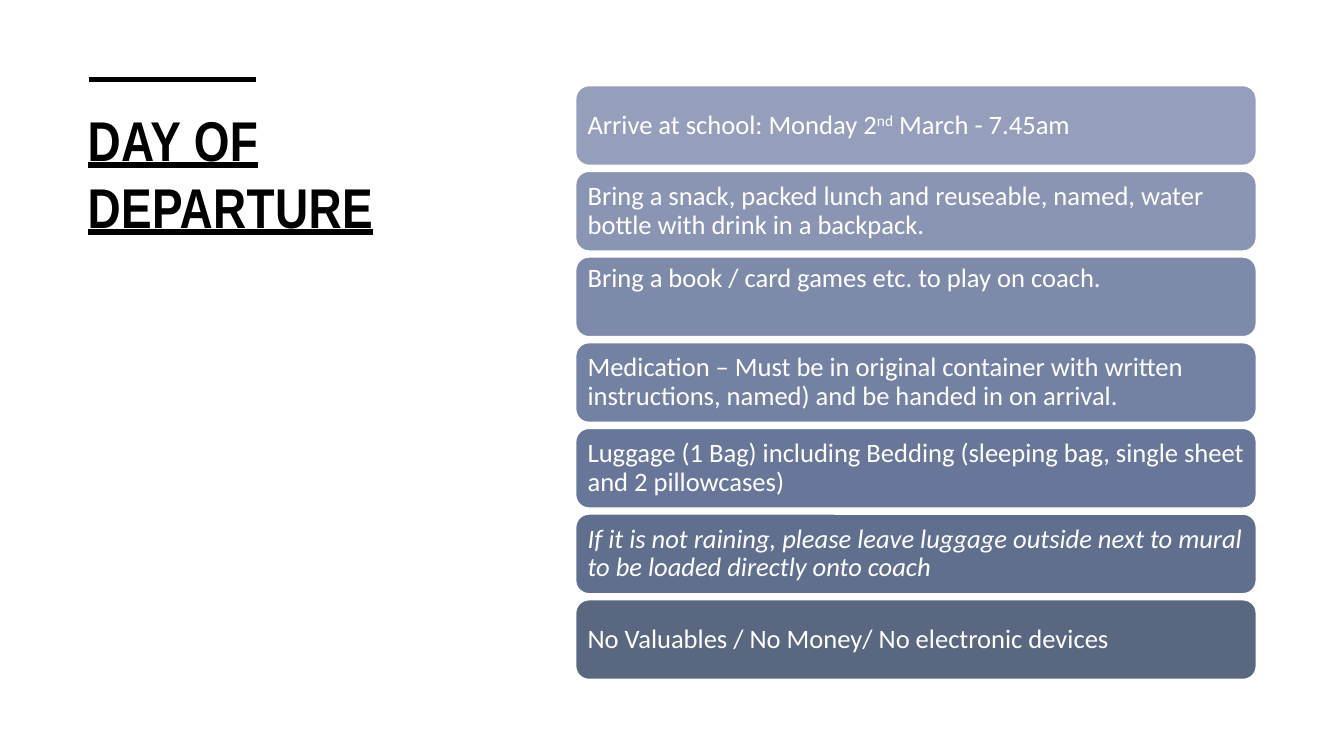
from dataclasses import dataclass

from pptx import Presentation
from pptx.dml.color import RGBColor
from pptx.enum import shapes, text
from pptx.oxml import ns
from pptx.util import Inches, Pt
from lxml import etree


@dataclass(frozen=True)
class Theme:
    ink: str = "000000"
    paper: str = "FFFFFF"
    bars: tuple = ("959EBB", "8A94B3", "7E8AAA", "7381A2",
                   "687799", "606F8D", "596781")
    head: str = "Arial Narrow"
    body: str = "Calibri"
    big: int = 40
    size: int = 19


THEME = Theme()
TOP, MID = text.MSO_ANCHOR.TOP, text.MSO_ANCHOR.MIDDLE

# Each step: its runs as (text, run format), then the bar format
STEPS = [
    ([("Arrive at school: Monday 2", {}), ("nd", {"base": 30}),
      (" March - 7.45am", {})], {}),
    ([("Bring a snack, packed lunch and reuseable, named, water bottle "
       "with drink in a backpack.", {})], {}),
    ([("Bring a book / card games etc. to play on coach.", {})],
     {"anchor": TOP, "inset": 0.04}),
    ([("Medication – Must be in original container with written "
       "instructions, named) and be handed in on arrival.", {})], {}),
    ([("Luggage (1 Bag) including Bedding (sleeping bag, single sheet "
       "and 2 pillowcases)", {})], {}),
    ([("If it is not raining, please leave luggage outside next to mural "
       "to be loaded directly onto coach", {"italic": True})], {}),
    ([("No Valuables / No Money/ No electronic devices", {})], {}),
]


def rgb(code):
    return RGBColor.from_string(code)


def write(para, words, font=THEME.body, size=THEME.size, color=THEME.paper,
          bold=False, italic=False, under=False, base=0, track=0):
    """Add one run; base is a percentage and track is in points."""
    run = para.add_run()
    run.text = words
    face = run.font
    face.name, face.size = font, Pt(size)
    face.color.rgb = rgb(color)
    face.bold, face.italic, face.underline = bold, italic, under
    props = run._r.get_or_add_rPr()
    if base:
        props.set("baseline", str(base * 1000))
    if track:
        props.set("spc", str(int(track * 100)))


def add_title(slide, words):
    box = slide.shapes.add_textbox(Inches(0.77), Inches(1),
                                   Inches(4.28), Inches(4.35))
    box.text_frame.word_wrap = True
    para = box.text_frame.paragraphs[0]
    para.space_after = Pt(6)
    write(para, words, font=THEME.head, size=THEME.big, color=THEME.ink,
          bold=True, under=True, track=0.3)


def add_rule(slide, left, right, y):
    rule = slide.shapes.add_connector(
        shapes.MSO_CONNECTOR.STRAIGHT,
        Inches(left), Inches(y), Inches(right), Inches(y))
    rule.line.color.rgb = rgb(THEME.ink)
    rule.line.width = Pt(3.5)
    etree.SubElement(rule._element.spPr, ns.qn("a:effectLst"))


def add_bar(slide, y, fill, runs, anchor=MID, inset=0.08):
    bar = slide.shapes.add_shape(
        shapes.MSO_SHAPE.ROUNDED_RECTANGLE,
        Inches(5.71), Inches(y), Inches(6.75), Inches(0.79))
    bar.shadow.inherit = False
    bar.fill.solid()
    bar.fill.fore_color.rgb = rgb(fill)
    bar.line.color.rgb = rgb(THEME.paper)
    bar.line.width = Pt(1)
    frame = bar.text_frame
    frame.word_wrap = True
    frame.vertical_anchor = anchor
    frame.margin_left = frame.margin_right = Inches(0.08)
    frame.margin_top = frame.margin_bottom = Inches(inset)
    para = frame.paragraphs[0]
    para.alignment = text.PP_ALIGN.LEFT
    para.line_spacing = 0.9
    for words, style in runs:
        write(para, words, **style)


def main():
    deck = Presentation()
    deck.slide_width, deck.slide_height = Inches(13.33), Inches(7.5)
    slide = deck.slides.add_slide(deck.slide_layouts[6])

    # Heading
    add_title(slide, "DAY OF DEPARTURE")
    add_rule(slide, 0.88, 2.54, 0.79)

    # Stack of steps, one every 0.85 inch
    for row, (fill, (runs, style)) in enumerate(zip(THEME.bars, STEPS)):
        add_bar(slide, 0.85 * (row + 1), fill, runs, **style)

    deck.save("out.pptx")


if __name__ == "__main__":
    main()
